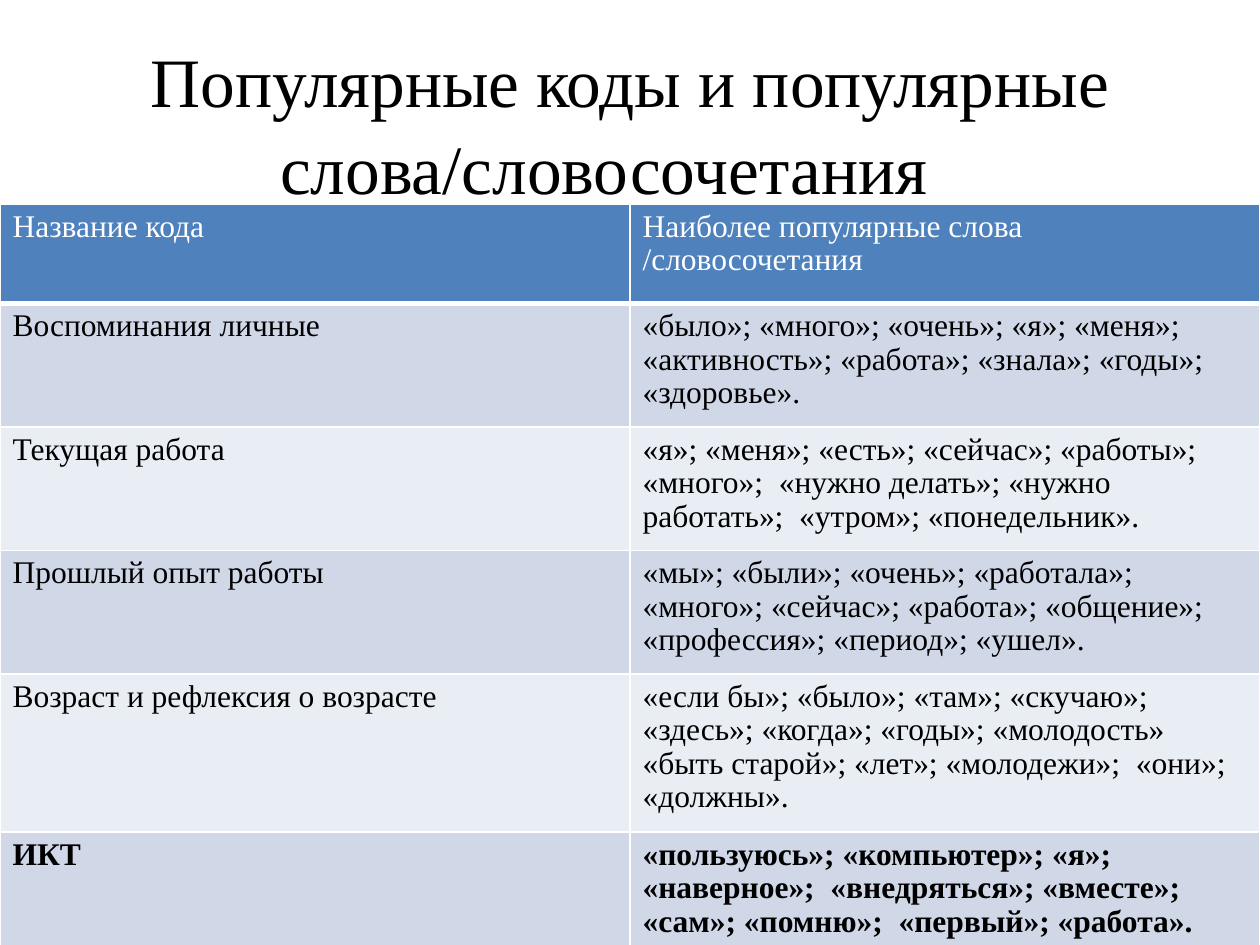
from dataclasses import dataclass

from lxml import etree
from pptx import Presentation
from pptx import util as u
from pptx.dml.color import RGBColor
from pptx.enum import text
from pptx.oxml.ns import qn

WIDTH, HEIGHT = 10, 7.5
FONT = "Times New Roman"
WHITE, BLACK = "FFFFFF", "000000"
HEADER_FILL = "4F81BD"
BAND_FILLS = ("D0D8E8", "E9EDF4")
TABLE_TOP = 1.62
HEADER_HEIGHT, ROW_HEIGHT = 0.79, 0.98


@dataclass
class CodeRow:
    name: str
    words: str
    bold: bool = False


HEADER = CodeRow("Название кода", "Наиболее популярные слова /словосочетания")
CODES = [
    CodeRow("Воспоминания личные",
            "«было»; «много»; «очень»; «я»; «меня»; «активность»; «работа»; "
            "«знала»; «годы»; «здоровье»."),
    CodeRow("Текущая работа",
            "«я»; «меня»; «есть»; «сейчас»; «работы»; «много»;  «нужно делать»; "
            "«нужно работать»;  «утром»; «понедельник»."),
    CodeRow("Прошлый опыт работы",
            "«мы»; «были»; «очень»; «работала»; «много»; «сейчас»; «работа»; "
            "«общение»; «профессия»; «период»; «ушел»."),
    CodeRow("Возраст и рефлексия о возрасте",
            "«если бы»; «было»; «там»; «скучаю»; «здесь»; «когда»; «годы»; "
            "«молодость» «быть старой»; «лет»; «молодежи»;  «они»; «должны»."),
    CodeRow("ИКТ",
            "«пользуюсь»; «компьютер»; «я»; «наверное»;  «внедряться»; «вместе»; "
            "«сам»; «помню»;  «первый»; «работа».", bold=True),
]


def rgb(value: str) -> RGBColor:
    return RGBColor.from_string(value)


def write(tf, content: str, *, size: float, color: str = BLACK, bold: bool = False,
          align=text.PP_ALIGN.LEFT, spacing: float = 1.0) -> None:
    tf.word_wrap = True
    p = tf.paragraphs[0]
    p.alignment, p.line_spacing = align, spacing
    r = p.add_run()
    r.text = content
    r.font.name, r.font.size, r.font.bold = FONT, u.Pt(size), bold
    r.font.color.rgb = rgb(color)


def set_borders(cell, bottom: float = 1) -> None:
    """Give the cell white borders; call before filling, as lines precede the fill."""
    tc_pr = cell._tc.get_or_add_tcPr()
    for side, points in (("L", 1), ("R", 1), ("T", 1), ("B", bottom)):
        line = etree.SubElement(tc_pr, qn(f"a:ln{side}"), w=str(u.Pt(points)))
        fill = etree.SubElement(line, qn("a:solidFill"))
        etree.SubElement(fill, qn("a:srgbClr"), val=WHITE)


def draw_row(table, index: int, row: CodeRow) -> None:
    is_header = index == 0
    table.rows[index].height = u.Inches(HEADER_HEIGHT if is_header else ROW_HEIGHT)
    fill = HEADER_FILL if is_header else BAND_FILLS[(index - 1) % 2]
    for column, content in enumerate((row.name, row.words)):
        cell = table.cell(index, column)
        set_borders(cell, bottom=3 if is_header else 1)
        cell.fill.solid()
        cell.fill.fore_color.rgb = rgb(fill)
        write(cell.text_frame, content, size=18, bold=row.bold, spacing=0.96,
              color=WHITE if is_header else BLACK)


def draw_title(s) -> None:
    margin = 0.05 * WIDTH
    sp = s.shapes.add_textbox(u.Inches(margin), u.Inches(0.04 * HEIGHT),
                              u.Inches(WIDTH - 2 * margin), u.Inches(HEIGHT / 6))
    tf = sp.text_frame
    tf.vertical_anchor = text.MSO_ANCHOR.MIDDLE
    tf.margin_top, tf.margin_bottom = u.Inches(0.1), u.Inches(0.02)
    write(tf, "Популярные коды и популярные слова/словосочетания   ", size=39.6,
          align=text.PP_ALIGN.CENTER, spacing=1.04)


def draw_table(s) -> None:
    rows = [HEADER, *CODES]
    height = HEADER_HEIGHT + ROW_HEIGHT * len(CODES)
    table = s.shapes.add_table(len(rows), 2, 0, u.Inches(TABLE_TOP),
                               u.Inches(WIDTH), u.Inches(height)).table
    for index, row in enumerate(rows):
        draw_row(table, index, row)


def main() -> None:
    prs = Presentation()
    prs.slide_width, prs.slide_height = u.Inches(WIDTH), u.Inches(HEIGHT)
    s = prs.slides.add_slide(prs.slide_layouts[6])
    draw_title(s)
    draw_table(s)
    prs.save("out.pptx")


if __name__ == "__main__":
    main()
